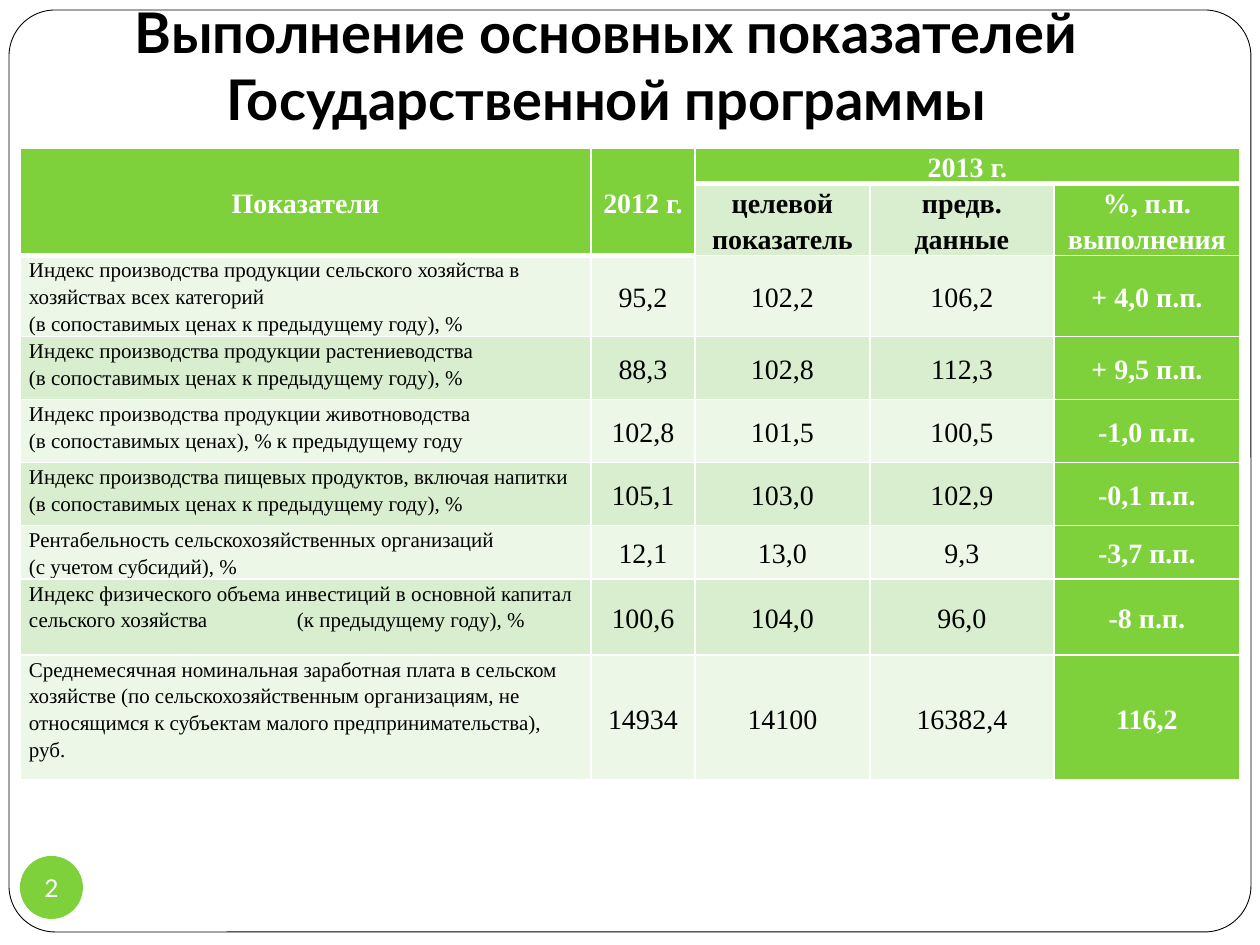
from lxml import etree
from pptx import Presentation
from pptx import util as u
from pptx.dml.color import RGBColor
from pptx.enum import shapes, text
from pptx.oxml.ns import qn

GREEN, MINT, PALE = "7FD13B", "D8EECE", "ECF7E8"
WHITE, BLACK = "FFFFFF", "000000"
SANS, SERIF = "Lato", "Times New Roman"
COLUMNS = [571, 104, 175, 184, 186]
ROWS = [35, 71, 81, 63, 63, 63, 53, 76, 125]
TAB_STOP = 268

INDICATORS = [
    ("Индекс производства продукции сельского хозяйства в хозяйствах всех категорий\n"
     "(в сопоставимых ценах к предыдущему году), %",
     "95,2", "102,2", "106,2", "+ 4,0 п.п."),
    ("Индекс производства продукции растениеводства\n"
     "(в сопоставимых ценах к предыдущему году), %",
     "88,3", "102,8", "112,3", "+ 9,5 п.п."),
    ("Индекс производства продукции животноводства\n"
     "(в сопоставимых ценах), % к предыдущему году",
     "102,8", "101,5", "100,5", "-1,0 п.п."),
    ("Индекс производства пищевых продуктов, включая напитки "
     "(в сопоставимых ценах к предыдущему году), %",
     "105,1", "103,0", "102,9", "-0,1 п.п."),
    ("Рентабельность сельскохозяйственных организаций\n(с учетом субсидий), %",
     "12,1", "13,0", "9,3", "-3,7 п.п."),
    ("Индекс физического объема инвестиций в основной капитал "
     "сельского хозяйства\t(к предыдущему году), %",
     "100,6", "104,0", "96,0", "-8 п.п."),
    ("Среднемесячная номинальная заработная плата в сельском хозяйстве "
     "(по сельскохозяйственным организациям, не относящимся к субъектам "
     "малого предпринимательства), руб.",
     "14934", "14100", "16382,4", "116,2"),
]


def px(n):
    return u.Emu(round(n * 914400 / 126))


def rgb(value):
    return RGBColor.from_string(value)


class Deck:
    def __init__(self):
        self.prs = Presentation()
        self.prs.slide_width, self.prs.slide_height = px(1260), px(945)
        self.s = self.prs.slides.add_slide(self.prs.slide_layouts[5])

    def label(self, p, value, size, color, font, bold=False, center=True):
        p.text = value
        p.alignment = text.PP_ALIGN.CENTER if center else text.PP_ALIGN.LEFT
        p.font.size, p.font.name, p.font.bold = u.Pt(size), font, bold
        p.font.color.rgb = rgb(color)

    def title(self, value, x, y, w, h):
        sp = self.s.shapes.title
        sp.left, sp.top, sp.width, sp.height = map(px, (x, y, w, h))
        tf = sp.text_frame
        tf.auto_size = text.MSO_AUTO_SIZE.NONE
        tf.word_wrap = True
        tf.vertical_anchor = text.MSO_ANCHOR.BOTTOM
        tf.margin_bottom = px(13)
        self.label(tf.paragraphs[0], value, 32, BLACK, SANS, bold=True)

    def shape(self, kind, x, y, w, h, fill, line=None):
        sp = self.s.shapes.add_shape(kind, *map(px, (x, y, w, h)))
        sp.shadow.inherit = False
        sp.fill.solid()
        sp.fill.fore_color.rgb = rgb(fill)
        if line:
            sp.line.color.rgb = rgb(line)
            sp.line.width = u.Pt(0.5)
        else:
            sp.line.fill.background()
        return sp

    def frame(self, x, y, w, h):
        sp = self.shape(shapes.MSO_SHAPE.ROUNDED_RECTANGLE, x, y, w, h, WHITE, BLACK)
        sp.adjustments[0] = 0.05
        self.s.shapes.element.insert(2, sp.element)

    def badge(self, value, x, y, size):
        sp = self.shape(shapes.MSO_SHAPE.OVAL, x, y, size, size, GREEN)
        tf = sp.text_frame
        tf.margin_left = tf.margin_right = tf.margin_top = tf.margin_bottom = 0
        tf.word_wrap = False
        tf.vertical_anchor = text.MSO_ANCHOR.MIDDLE
        self.label(tf.paragraphs[0], value, 14, WHITE, SANS)

    def table(self, x, y, columns, rows):
        size = map(px, (x, y, sum(columns), sum(rows)))
        table = self.s.shapes.add_table(len(rows), len(columns), *size).table
        for column, width in zip(table.columns, columns):
            column.width = px(width)
        for row, height in zip(table.rows, rows):
            row.height = px(height)
        return table

    def borders(self, cell, bottom):
        tcPr = cell._tc.get_or_add_tcPr()
        for side, width in (("L", 1), ("R", 1), ("T", 1), ("B", bottom)):
            ln = etree.SubElement(tcPr, qn("a:ln" + side), w=str(u.Pt(width)))
            fill = etree.SubElement(ln, qn("a:solidFill"))
            etree.SubElement(fill, qn("a:srgbClr"), val=WHITE)

    def cell(self, cell, value, fill, color=BLACK, size=16, bold=False, center=True, bottom=1):
        self.borders(cell, bottom)
        cell.fill.solid()
        cell.fill.fore_color.rgb = rgb(fill)
        cell.margin_left = cell.margin_right = px(9)
        cell.margin_top = cell.margin_bottom = 0
        cell.vertical_anchor = text.MSO_ANCHOR.MIDDLE if center else text.MSO_ANCHOR.TOP
        p = cell.text_frame.paragraphs[0]
        if "\t" in value:
            tabs = etree.SubElement(p._p.get_or_add_pPr(), qn("a:tabLst"))
            etree.SubElement(tabs, qn("a:tab"), pos=str(px(TAB_STOP)), algn="l")
        self.label(p, value, size, color, SERIF, bold, center)
        p.line_spacing = 1.15


def fill_header(deck, table):
    for first, last in (((0, 0), (1, 0)), ((0, 1), (1, 1)), ((0, 2), (0, 4))):
        table.cell(*first).merge(table.cell(*last))
    for col, value in enumerate(("Показатели", "2012 г.", "2013 г.")):
        deck.cell(table.cell(0, col), value, GREEN, WHITE, bold=True, bottom=3)
    for col, value in enumerate(("целевой показатель", "предв. данные"), 2):
        deck.cell(table.cell(1, col), value, MINT, bold=True)
    deck.cell(table.cell(1, 4), "%, п.п. выполнения", GREEN, WHITE, bold=True)


def fill_indicators(deck, table):
    for row, (name, *values, result) in enumerate(INDICATORS, 2):
        band = MINT if row % 2 else PALE
        deck.cell(table.cell(row, 0), name, band, size=12, center=False)
        for col, value in enumerate(values, 1):
            deck.cell(table.cell(row, col), value, band)
        deck.cell(table.cell(row, 4), result, GREEN, WHITE, bold=True)


def main():
    deck = Deck()
    deck.frame(9, 10, 1242, 922)
    deck.title("Выполнение основных показателей Государственной программы", 25, 26, 1163, 119)
    table = deck.table(20, 148, COLUMNS, ROWS)
    fill_header(deck, table)
    fill_indicators(deck, table)
    deck.badge("2", 20, 856, 63)
    deck.prs.save("out.pptx")


if __name__ == "__main__":
    main()
